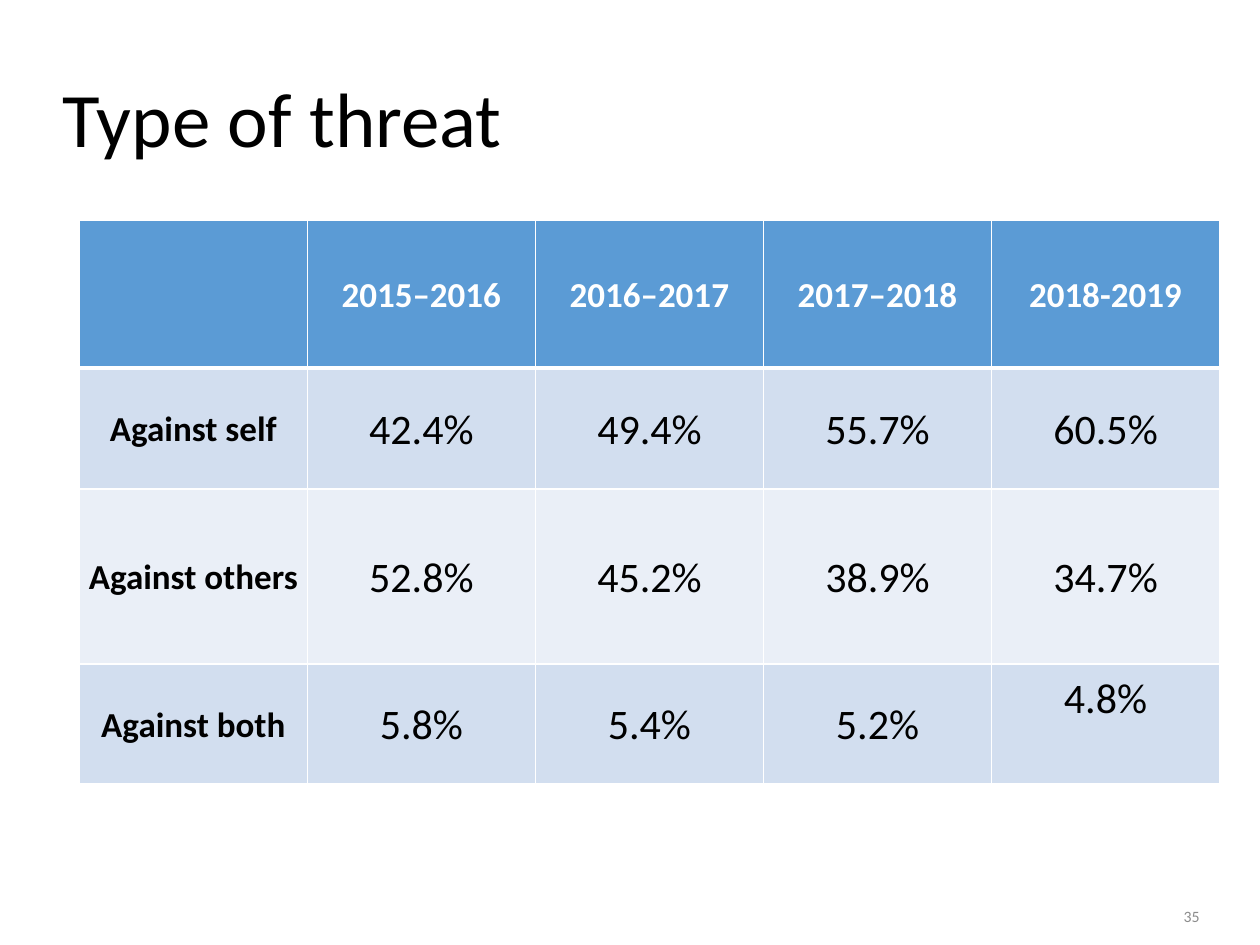
from lxml import etree
from pptx import Presentation
from pptx.dml.color import RGBColor
from pptx.enum import text
from pptx.oxml import ns
from pptx.util import Inches, Pt

WHITE = RGBColor(0xFF, 0xFF, 0xFF)
BLACK = RGBColor(0, 0, 0)
GRAY = RGBColor(0x8C, 0x8C, 0x8C)
HEADER_BLUE = RGBColor(0x5B, 0x9B, 0xD5)
BAND_DARK = RGBColor(0xD2, 0xDE, 0xEF)
BAND_LIGHT = RGBColor(0xEA, 0xEF, 0xF7)

MIDDLE = text.MSO_ANCHOR.MIDDLE
CENTER = text.PP_ALIGN.CENTER

THREATS = [
    ["", "2015–2016", "2016–2017", "2017–2018", "2018-2019"],
    ["Against self", "42.4%", "49.4%", "55.7%", "60.5%"],
    ["Against others", "52.8%", "45.2%", "38.9%", "34.7%"],
    ["Against both", "5.8%", "5.4%", "5.2%", "4.8%"],
]
ROW_HEIGHTS = [1.17, 0.96, 1.39, 0.95]
COLUMN_WIDTH = 1.81


class SlideBuilder:
    font_name = "Calibri"

    def __init__(self, slide):
        self.slide = slide

    def style(self, paragraph, size, color, align, spacing=1.0, bold=False):
        paragraph.alignment = align
        paragraph.line_spacing = spacing
        font = paragraph.font
        for target in [font] + [run.font for run in paragraph.runs]:
            target.name = self.font_name
            target.size = Pt(size)
            target.bold = bold
            target.color.rgb = color

    def label(self, wording, left, top, width, height, anchor, **style):
        box = self.slide.shapes.add_textbox(
            Inches(left), Inches(top), Inches(width), Inches(height))
        frame = box.text_frame
        frame.word_wrap = True
        frame.vertical_anchor = anchor
        frame.margin_left = frame.margin_right = 0
        frame.margin_top = frame.margin_bottom = 0
        frame.text = wording
        self.style(frame.paragraphs[0], **style)

    def borders(self, cell, widths):
        """Draw white cell edges; widths maps L, R, T and B to points."""
        properties = cell._tc.get_or_add_tcPr()
        for side, width in widths.items():
            line = etree.SubElement(
                properties, ns.qn(f"a:ln{side}"), w=str(Pt(width)))
            fill = etree.SubElement(line, ns.qn("a:solidFill"))
            etree.SubElement(fill, ns.qn("a:srgbClr"), val=str(WHITE))

    def table(self, rows, left, top, column_width, row_heights):
        columns = len(rows[0])
        table = self.slide.shapes.add_table(
            len(rows), columns, Inches(left), Inches(top),
            Inches(column_width * columns), Inches(sum(row_heights))).table
        for column in table.columns:
            column.width = Inches(column_width)
        for r, (values, height) in enumerate(zip(rows, row_heights)):
            table.rows[r].height = Inches(height)
            for c, value in enumerate(values):
                self.cell(table.cell(r, c), value, r, c)
        return table

    def cell(self, cell, value, row, column):
        header = row == 0
        heading = header or column == 0
        self.borders(cell, {"L": 1, "R": 1, "T": 3 if row == 1 else 1,
                            "B": 3 if header else 1})
        cell.fill.solid()
        cell.fill.fore_color.rgb = (
            HEADER_BLUE if header else BAND_DARK if row % 2 else BAND_LIGHT)
        cell.vertical_anchor = MIDDLE
        cell.margin_left = cell.margin_right = Inches(0.07)
        cell.margin_top = cell.margin_bottom = 0
        cell.text = value
        self.style(cell.text_frame.paragraphs[0], 20 if heading else 24,
                   WHITE if header else BLACK, CENTER, 1.07, heading)


def main():
    deck = Presentation()
    deck.slide_width, deck.slide_height = Inches(10), Inches(7.5)
    builder = SlideBuilder(deck.slides.add_slide(deck.slide_layouts[6]))

    builder.label("Type of threat", 0.5, 0.4, 9, 1.14, MIDDLE, size=44,
                  color=BLACK, align=text.PP_ALIGN.LEFT, spacing=0.9)
    builder.label("35", 7.27, 6.95, 2.25, 0.4, text.MSO_ANCHOR.BOTTOM, size=9,
                  color=GRAY, align=text.PP_ALIGN.RIGHT)

    threats = builder.table(THREATS, 0.63, 1.75, COLUMN_WIDTH, ROW_HEIGHTS)
    latest_both = threats.cell(3, 4)
    latest_both.vertical_anchor = text.MSO_ANCHOR.TOP
    latest_both.margin_top = Inches(0.05)

    deck.save("out.pptx")


if __name__ == "__main__":
    main()
